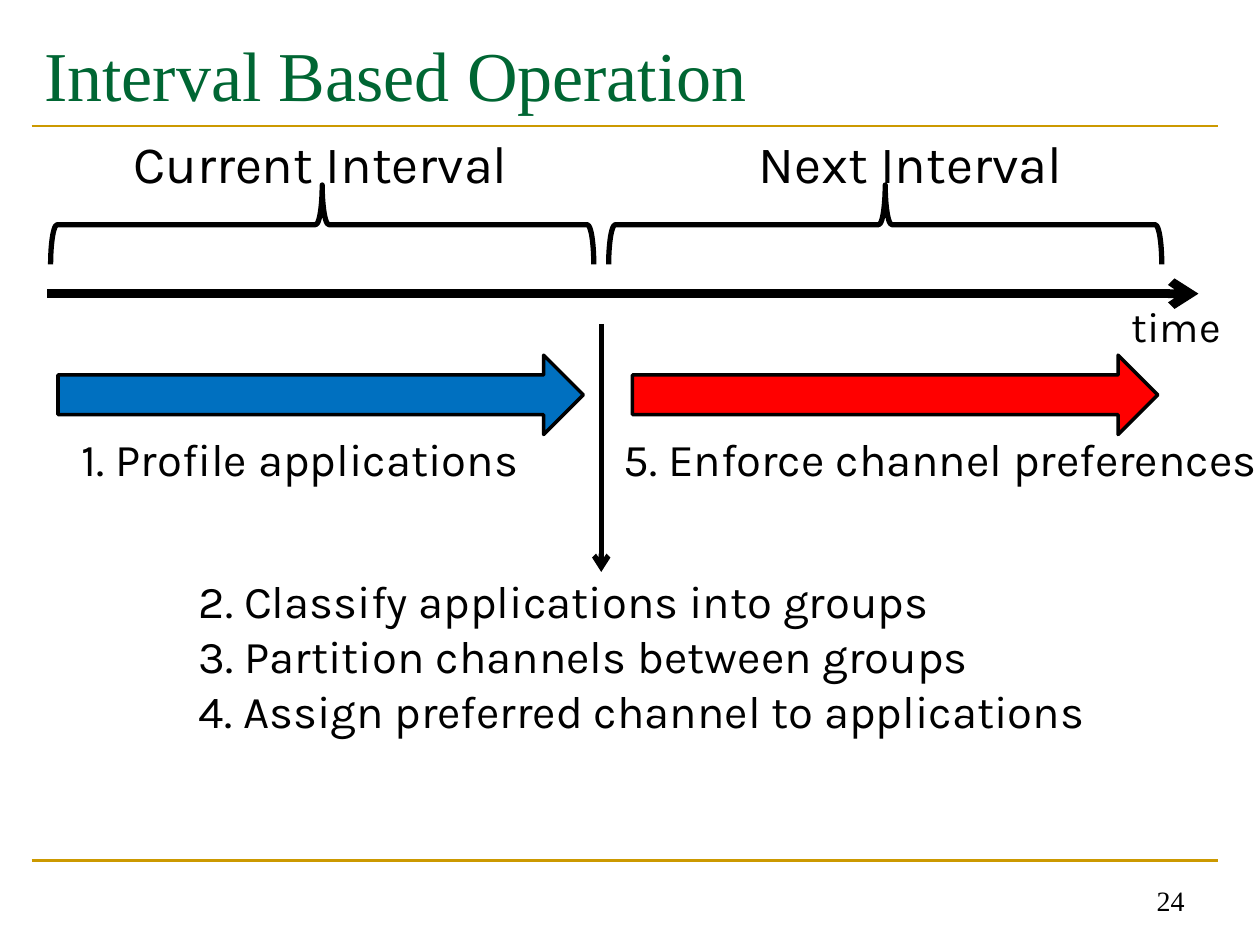
from lxml import etree
from pptx import Presentation
from pptx.dml.color import RGBColor
from pptx.enum.shapes import MSO_CONNECTOR, MSO_SHAPE
from pptx.enum.text import MSO_ANCHOR, PP_ALIGN
from pptx.oxml.ns import qn
from pptx.util import Cm, Pt

STRAIGHT = MSO_CONNECTOR.STRAIGHT
BRACE, ARROW = MSO_SHAPE.LEFT_BRACE, MSO_SHAPE.RIGHT_ARROW
TOP, MIDDLE, BOTTOM = MSO_ANCHOR.TOP, MSO_ANCHOR.MIDDLE, MSO_ANCHOR.BOTTOM
LEFT, CENTER, RIGHT = PP_ALIGN.LEFT, PP_ALIGN.CENTER, PP_ALIGN.RIGHT

COLORS = {"title": "006633", "rule": "CC9900", "ink": "000000",
          "profile": "0070C0", "enforce": "FF0000"}
SERIF, SANS = "Times New Roman", "Karla"


class SlideBuilder:
    """Draws styled elements on the current slide, with lengths in centimetres."""

    def __init__(self, slide):
        self.slide = slide

    def color(self, name):
        return RGBColor.from_string(COLORS[name])

    def fill_text(self, shape, lines, size, font=SANS, color="ink", align=LEFT, anchor=TOP, wrap=True):
        frame = shape.text_frame
        frame.text = "\n".join(lines)
        frame_format = {"word_wrap": wrap, "vertical_anchor": anchor,
                        "margin_left": Cm(0.25), "margin_right": Cm(0.25),
                        "margin_top": Cm(0.13), "margin_bottom": Cm(0.13)}
        for name, value in frame_format.items():
            setattr(frame, name, value)
        font_format = {"name": font, "size": Pt(size), "bold": False}
        for paragraph in frame.paragraphs:
            paragraph.alignment = align
            run_font = paragraph.runs[0].font
            for name, value in font_format.items():
                setattr(run_font, name, value)
            run_font.color.rgb = self.color(color)

    def title(self, text, box):
        title = self.slide.shapes.title
        for name, value in zip(("left", "top", "width", "height"), box):
            setattr(title, name, Cm(value))
        self.fill_text(title, [text], 40, SERIF, "title", anchor=MIDDLE)

    def text(self, lines, box, size, **style):
        self.fill_text(self.slide.shapes.add_textbox(*map(Cm, box)), lines, size, **style)

    def line(self, start, end, width, color="ink", arrow=False):
        connector = self.slide.shapes.add_connector(STRAIGHT, *map(Cm, start + end))
        connector.line.width = Pt(width)
        connector.line.color.rgb = self.color(color)
        properties = connector._element.spPr
        if arrow:
            etree.SubElement(properties.find(qn("a:ln")), qn("a:tailEnd"), type="arrow")
        etree.SubElement(properties, qn("a:effectLst"))

    def shape(self, kind, box, width, fill=None):
        shape = self.slide.shapes.add_shape(kind, *map(Cm, box))
        shape.shadow.inherit = False
        shape.line.width = Pt(width)
        shape.line.color.rgb = self.color("ink")
        if fill:
            shape.fill.solid()
            shape.fill.fore_color.rgb = self.color(fill)
        else:
            shape.fill.background()
        return shape

    def brace(self, left, top, width, height):
        turned = (left + (width - height) / 2, top + (height - width) / 2, height, width)
        self.shape(BRACE, turned, 3).rotation = 90


def main():
    presentation = Presentation()
    presentation.slide_width, presentation.slide_height = Cm(25.4), Cm(19.05)
    slide = presentation.slides.add_slide(presentation.slide_layouts[5])
    builder = SlideBuilder(slide)

    for height in (17.35, 2.54):
        builder.line((0.64, height), (24.56, height), 1.5, "rule")
    builder.title("Interval Based Operation", (0.64, 0.43, 23.92, 2.11))
    builder.text(["24"], (18.21, 17.35, 5.92, 1.27), 16, font=SERIF, align=RIGHT, anchor=BOTTOM)

    builder.line((0.95, 5.92), (24.16, 5.92), 5, arrow=True)
    builder.text(["time"], (22.56, 5.92, 2.59, 1.27), 24, wrap=False)

    intervals = [
        ("Current Interval", 1.17, 1.02, 10.95, 1.17, "profile"),
        ("Next Interval", 13.06, 12.27, 11.15, 12.75, "enforce"),
    ]
    for name, label_left, brace_left, brace_width, arrow_left, fill in intervals:
        builder.brace(brace_left, 3.73, brace_width, 1.6)
        builder.text([name], (label_left, 2.51, 10.59, 1.55), 30, align=CENTER)
        builder.shape(ARROW, (arrow_left, 7.16, 10.59, 1.6), 2, fill)

    builder.text(["1. Profile applications"], (0.76, 8.56, 10.59, 1.37), 26, align=CENTER)
    builder.line((12.12, 6.53), (12.12, 11.53), 3, arrow=True)
    builder.text(["2. Classify applications into groups",
                  "3. Partition channels between groups",
                  "4. Assign preferred channel to applications"],
                 (3.76, 11.43, 18.49, 3.58), 26)
    builder.text(["5. Enforce channel preferences"], (12.32, 8.56, 14.6, 1.37), 26)
    presentation.save("out.pptx")


if __name__ == "__main__":
    main()
